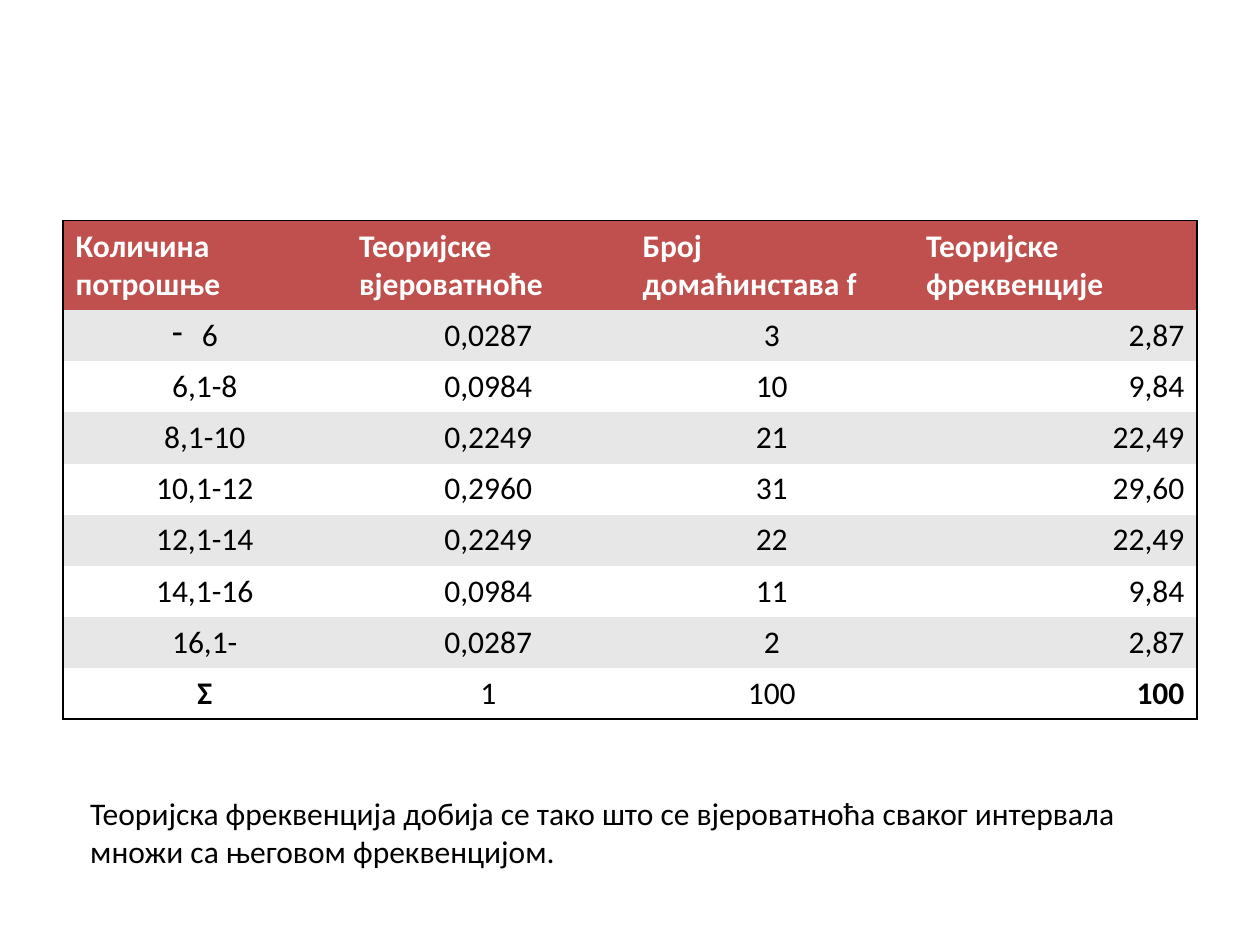
from lxml.etree import SubElement
from pptx import Presentation
from pptx.dml.color import RGBColor
from pptx.enum.text import MSO_ANCHOR as Anchor, PP_ALIGN as Align
from pptx.oxml.ns import qn
from pptx.util import Cm, Pt

HEADERS = ["Количина потрошње", "Теоријске вјероватноће",
           "Број домаћинстава f", "Теоријске фреквенције"]
ROWS = [
    ["6", "0,0287", "3", "2,87"],
    ["6,1-8", "0,0984", "10", "9,84"],
    ["8,1-10", "0,2249", "21", "22,49"],
    ["10,1-12", "0,2960", "31", "29,60"],
    ["12,1-14", "0,2249", "22", "22,49"],
    ["14,1-16", "0,0984", "11", "9,84"],
    ["16,1-", "0,0287", "2", "2,87"],
    ["Σ", "1", "100", "100"],
]
NOTE = ("Теоријска фреквенција добија се тако што се вјероватноћа "
        "сваког интервала множи са његовом фреквенцијом.")
HEADER_FILL, BAND_FILL, PLAIN_FILL = "C0504D", "E7E7E7", "FFFFFF"


def color(value):
    return RGBColor.from_string(value)


class SlideBuilder:
    """Hold the text style and the current slide, and add elements to it."""

    def __init__(self, slide, font="Calibri", size=18, ink="000000"):
        self.slide = slide
        self.font_format = {"name": font, "size": Pt(size)}
        self.ink = ink

    def add_words(self, paragraph, text, ink=None, bold=False, align=Align.LEFT):
        paragraph.alignment = align
        run = paragraph.add_run()
        run.text = text
        for name, value in {**self.font_format, "bold": bold}.items():
            setattr(run.font, name, value)
        run.font.color.rgb = color(ink or self.ink)

    def bullet(self, paragraph, symbol, margin, hanging):
        properties = paragraph._p.get_or_add_pPr()
        properties.set("marL", str(margin))
        properties.set("indent", str(-hanging))
        SubElement(properties, qn("a:buChar"), char=symbol)

    def borders(self, cell, sides):
        properties = cell._tc.get_or_add_tcPr()
        fill = properties.find(qn("a:solidFill"))
        for side in ("L", "R", "T", "B"):
            line = SubElement(properties, qn(f"a:ln{side}"), w=str(Pt(1)))
            if side in sides:
                paint = SubElement(line, qn("a:solidFill"))
                SubElement(paint, qn("a:srgbClr"), val=self.ink)
            else:
                SubElement(line, qn("a:noFill"))
        properties.append(fill)

    def table(self, headers, rows, left, top, width, header_height, row_height):
        grid = [headers] + rows
        last_row, last_column = len(rows), len(headers) - 1
        height = header_height + row_height * last_row
        table = self.slide.shapes.add_table(
            len(grid), len(headers), left, top, width, height).table
        for row_index, values in enumerate(grid):
            is_header = row_index == 0
            table.rows[row_index].height = header_height if is_header else row_height
            band = BAND_FILL if row_index % 2 else PLAIN_FILL
            for column, text in enumerate(values):
                cell = table.cell(row_index, column)
                cell.vertical_anchor = Anchor.TOP
                cell.fill.solid()
                cell.fill.fore_color.rgb = color(HEADER_FILL if is_header else band)
                edges = {"L": column == 0, "R": column == last_column,
                         "T": is_header, "B": row_index == last_row}
                self.borders(cell, [side for side, shown in edges.items() if shown])
                body_align = Align.RIGHT if column == last_column else Align.CENTER
                is_total = row_index == last_row and column in (0, last_column)
                self.add_words(cell.text_frame.paragraphs[0], text,
                               ink="FFFFFF" if is_header else None,
                               bold=is_header or is_total,
                               align=Align.LEFT if is_header else body_align)
        return table

    def text(self, text, left, top, width, height):
        frame = self.slide.shapes.add_textbox(left, top, width, height).text_frame
        frame.word_wrap = True
        self.add_words(frame.paragraphs[0], text)


def main():
    presentation = Presentation()
    presentation.slide_width, presentation.slide_height = Cm(25.4), Cm(19.05)
    blank_layout = presentation.slide_layouts[6]
    builder = SlideBuilder(presentation.slides.add_slide(blank_layout))
    table = builder.table(HEADERS, ROWS, Cm(1.27), Cm(4.45), Cm(22.86),
                          Cm(1.78), Cm(1.03))
    first_interval = table.cell(1, 0).text_frame.paragraphs[0]
    builder.bullet(first_interval, "-", Cm(0.2), Cm(0.6))
    builder.text(NOTE, Cm(1.57), Cm(15.88), Cm(22.8), Cm(1.8))
    presentation.save("out.pptx")


if __name__ == "__main__":
    main()
